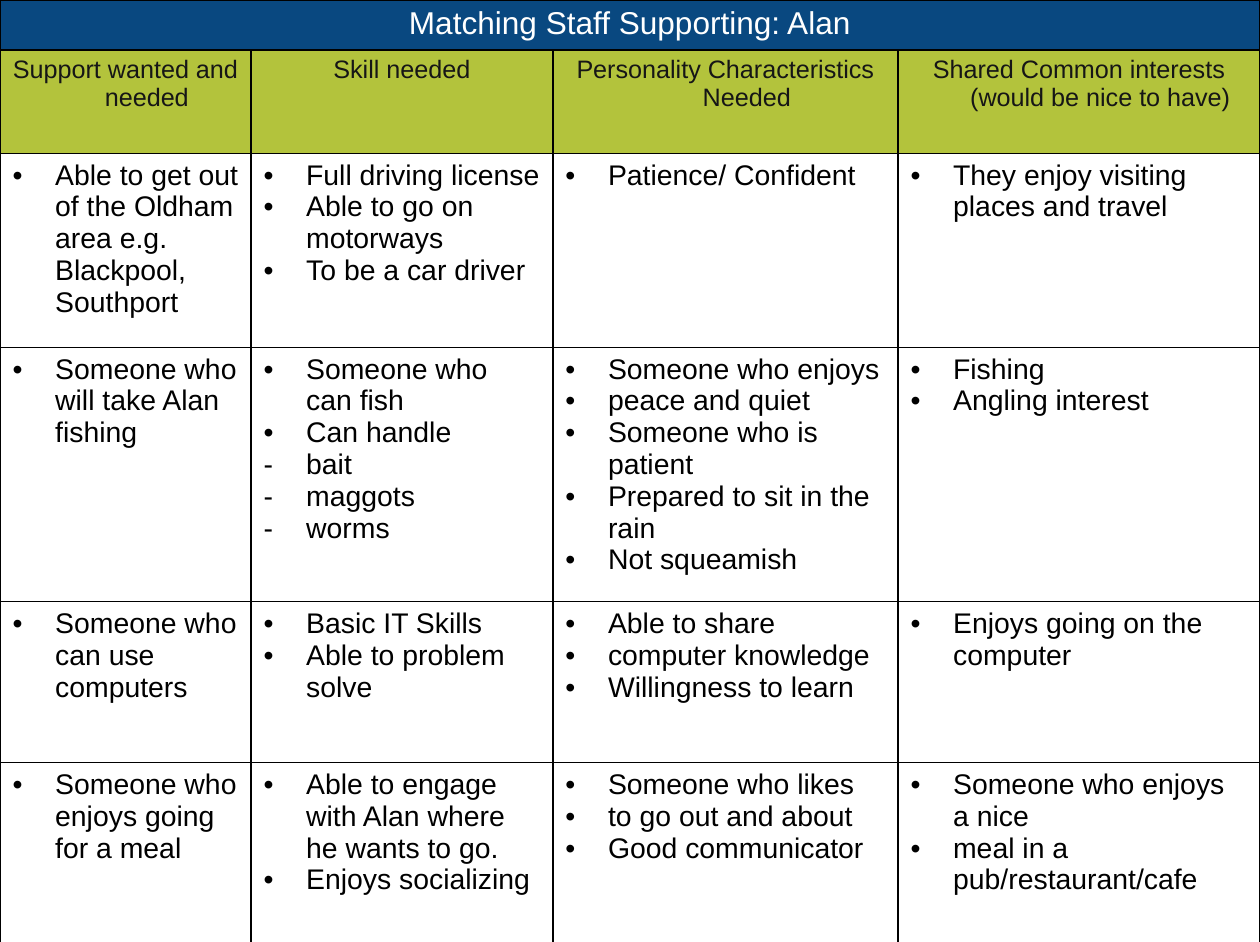
from lxml.etree import SubElement
from pptx import Presentation
from pptx.dml.color import RGBColor
from pptx.enum.text import MSO_ANCHOR, PP_ALIGN
from pptx.oxml.ns import qn
from pptx.util import Pt

COLORS = {
    "title_fill": "094880",
    "title_text": "FFFFFF",
    "heading_fill": "B3C33C",
    "heading_text": "161616",
    "body_text": "000000",
    "border": "000000",
}
FONT = "Arial"
INDENT = Pt(27)
COLUMN_WIDTHS = [159.2, 191.5, 218.9, 229.6]
ROW_HEIGHTS = [31.7, 65.5, 123.1, 161.4, 102.2, 121]

TITLE = "Matching Staff Supporting: Alan"
HEADINGS = [
    "Support wanted and needed",
    "Skill needed",
    "Personality Characteristics Needed",
    "Shared Common interests (would be nice to have)",
]
SUPPORT_NEEDS = [
    [
        ["Able to get out of the Oldham area e.g. Blackpool, Southport"],
        ["Full driving license", "Able to go on motorways", "To be a car driver"],
        ["Patience/ Confident"],
        ["They enjoy visiting places and travel"],
    ],
    [
        ["Someone who will take Alan fishing"],
        ["Someone who can fish", "Can handle", "- bait", "- maggots", "- worms"],
        ["Someone who enjoys", "peace and quiet", "Someone who is patient",
         "Prepared to sit in the rain", "Not squeamish"],
        ["Fishing", "Angling interest"],
    ],
    [
        ["Someone who can use computers"],
        ["Basic IT Skills", "Able to problem solve"],
        ["Able to share", "computer knowledge", "Willingness to learn"],
        ["Enjoys going on the computer"],
    ],
    [
        ["Someone who enjoys going for a meal"],
        ["Able to engage with Alan where he wants to go.", "Enjoys socializing"],
        ["Someone who likes", "to go out and about", "Good communicator"],
        ["Someone who enjoys a nice", "meal in a pub/restaurant/cafe"],
    ],
]


def style_cell(cell, fill=None):
    cell.margin_left = cell.margin_right = Pt(8)
    cell.margin_top = cell.margin_bottom = Pt(4)
    cell.vertical_anchor = MSO_ANCHOR.TOP
    properties = cell._tc.get_or_add_tcPr()
    for side in ("a:lnL", "a:lnR", "a:lnT", "a:lnB"):
        border = SubElement(properties, qn(side), w=str(Pt(1)))
        stroke = SubElement(border, qn("a:solidFill"))
        SubElement(stroke, qn("a:srgbClr"), val=COLORS["border"])
    if fill:
        cell.fill.solid()
        cell.fill.fore_color.rgb = RGBColor.from_string(COLORS[fill])
    else:
        cell.fill.background()


def write_paragraph(paragraph, text, size, color, bullet=None):
    properties = paragraph._p.get_or_add_pPr()
    properties.set("marL", str(INDENT))
    properties.set("indent", str(-INDENT))
    if bullet:
        SubElement(properties, qn("a:buFont"), typeface=FONT)
        SubElement(properties, qn("a:buChar"), char=bullet)
    else:
        paragraph.alignment = PP_ALIGN.CENTER
    run = paragraph.add_run()
    run.text = text
    run.font.name = FONT
    run.font.size = Pt(size)
    run.font.bold = False
    run.font.color.rgb = RGBColor.from_string(COLORS[color])


def fill_title(table):
    for cell in table.rows[0].cells:
        style_cell(cell, "title_fill")
    title = table.cell(0, 0)
    title.merge(table.cell(0, len(COLUMN_WIDTHS) - 1))
    write_paragraph(title.text_frame.paragraphs[0], TITLE, 20, "title_text")


def fill_headings(table):
    for cell, heading in zip(table.rows[1].cells, HEADINGS):
        style_cell(cell, "heading_fill")
        write_paragraph(cell.text_frame.paragraphs[0], heading, 16, "heading_text")


def fill_need(row, need):
    for cell, items in zip(row.cells, need):
        style_cell(cell)
        for index, item in enumerate(items):
            frame = cell.text_frame
            paragraph = frame.add_paragraph() if index else frame.paragraphs[0]
            bullet = "-" if item.startswith("- ") else "•"
            write_paragraph(paragraph, item.removeprefix("- "), 18, "body_text", bullet)


def add_matching_table(slide, left, top, width, height):
    table = slide.shapes.add_table(
        len(ROW_HEIGHTS), len(COLUMN_WIDTHS), Pt(left), Pt(top), Pt(width), Pt(height)
    ).table
    table.first_row = table.horz_banding = False
    for column, column_width in zip(table.columns, COLUMN_WIDTHS):
        column.width = Pt(column_width)
    for row, row_height in zip(table.rows, ROW_HEIGHTS):
        row.height = Pt(row_height)
    fill_title(table)
    fill_headings(table)
    for index, need in enumerate(SUPPORT_NEEDS, start=2):
        fill_need(table.rows[index], need)


def main():
    presentation = Presentation()
    presentation.slide_width = Pt(799.2)
    presentation.slide_height = Pt(597.6)
    slide = presentation.slides.add_slide(presentation.slide_layouts[6])
    add_matching_table(slide, 0, 0, sum(COLUMN_WIDTHS), sum(ROW_HEIGHTS))
    presentation.save("out.pptx")


if __name__ == "__main__":
    main()
